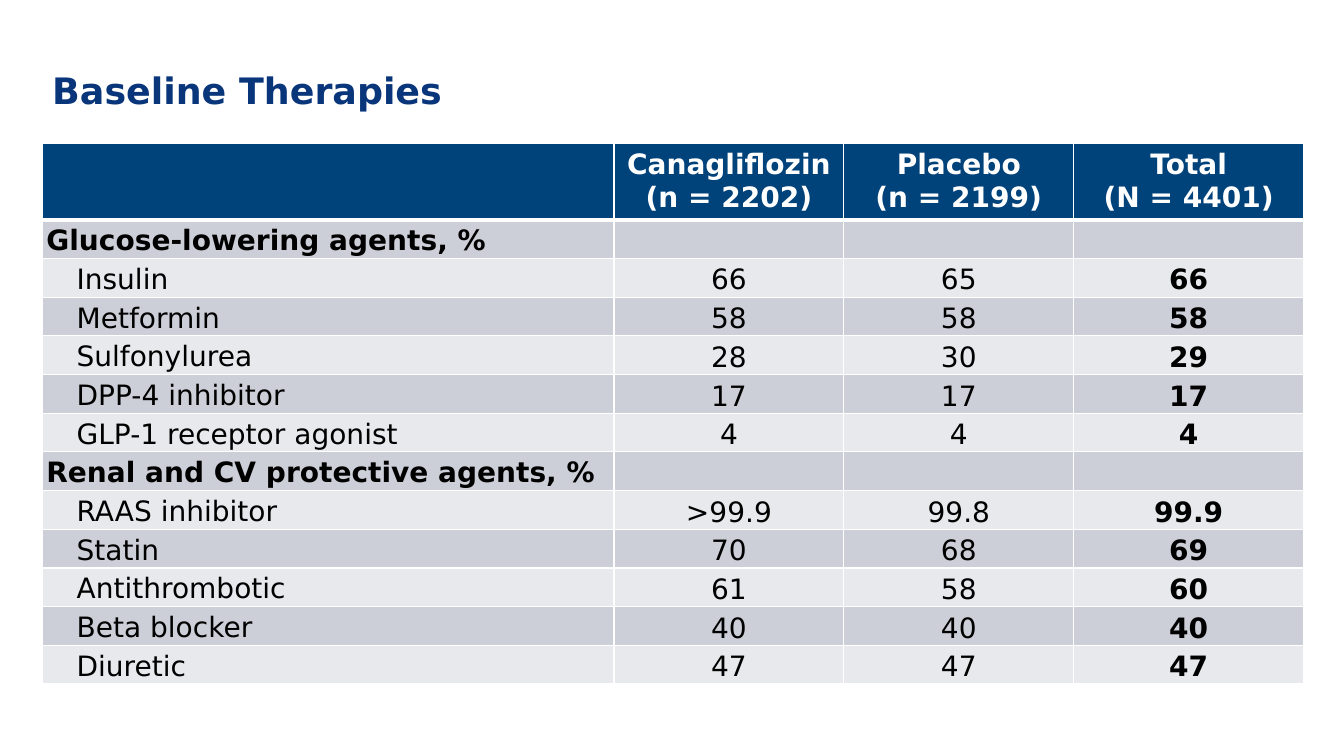
"""Build the Baseline Therapies slide."""
import pptx
import pptx.dml.color
import pptx.enum.text
import pptx.oxml
import pptx.oxml.ns
import pptx.util

Inches, Pt = pptx.util.Inches, pptx.util.Pt
ALIGN, ANCHOR = pptx.enum.text.PP_ALIGN, pptx.enum.text.MSO_ANCHOR

TITLE = "Baseline Therapies"
HEADER = ("", "Canagliflozin\n(n = 2202)", "Placebo\n(n = 2199)", "Total\n(N = 4401)")
GROUPS = {
    "Glucose-lowering agents, %": [
        ("Insulin", "66", "65", "66"),
        ("Metformin", "58", "58", "58"),
        ("Sulfonylurea", "28", "30", "29"),
        ("DPP-4 inhibitor", "17", "17", "17"),
        ("GLP-1 receptor agonist", "4", "4", "4"),
    ],
    "Renal and CV protective agents, %": [
        ("RAAS inhibitor", ">99.9", "99.8", "99.9"),
        ("Statin", "70", "68", "69"),
        ("Antithrombotic", "61", "58", "60"),
        ("Beta blocker", "40", "40", "40"),
        ("Diuretic", "47", "47", "47"),
    ],
}
FONT = "DejaVu Sans"
NAVY, TITLE_BLUE, WHITE, BLACK = "00427A", "09357A", "FFFFFF", "000000"
BANDS = ("E7E9EC", "CCCFD7")
LEFT, WIDTH = 0.42, 12.5
COL_WIDTHS = (5.67, 2.28, 2.28, 2.28)
HEADER_HEIGHT, ROW_HEIGHT = 0.76, 0.37


def rgb(color):
    return pptx.dml.color.RGBColor.from_string(color)


def style(p, size, color, bold):
    for r in p.runs:
        r.font.name, r.font.size, r.font.bold = FONT, Pt(size), bold
        r.font.color.rgb = rgb(color)


def add_borders(cell, top, bottom):
    tcPr = cell._tc.get_or_add_tcPr()
    for side, width in (("L", 1), ("R", 1), ("T", top), ("B", bottom)):
        tcPr.append(pptx.oxml.parse_xml(
            f'<a:ln{side} {pptx.oxml.ns.nsdecls("a")} w="{Pt(width)}">'
            f'<a:solidFill><a:srgbClr val="{WHITE}"/></a:solidFill></a:ln{side}>'))


def fill_cell(cell, text, row, col, is_group):
    is_header = row == 0
    add_borders(cell, 3 if row == 1 else 1, 3 if is_header else 1)
    cell.fill.solid()
    cell.fill.fore_color.rgb = rgb(NAVY if is_header else BANDS[row % 2])
    cell.margin_left = cell.margin_right = Inches(0 if col else 0.04)
    cell.margin_top = cell.margin_bottom = 0
    cell.vertical_anchor = ANCHOR.MIDDLE if col else ANCHOR.TOP
    cell.text_frame.text = text
    for p in cell.text_frame.paragraphs:
        p.alignment = ALIGN.CENTER if col else ALIGN.LEFT
        if not is_header:
            p.line_spacing = 1.15
            if col == 0 and not is_group:
                p._p.get_or_add_pPr().set("marL", str(Inches(0.3)))
        style(p, 20, WHITE if is_header else BLACK, is_header or is_group or col == 3)


def add_title(s):
    tf = s.shapes.add_textbox(Inches(LEFT), Inches(0.62), Inches(WIDTH), Inches(0.54)).text_frame
    tf.word_wrap = True
    tf.vertical_anchor = ANCHOR.BOTTOM
    tf.text = TITLE
    style(tf.paragraphs[0], 26, TITLE_BLUE, True)


def add_therapy_table(s):
    rows = [HEADER]
    for group, therapies in GROUPS.items():
        rows += [(group, "", "", ""), *therapies]
    heights = [HEADER_HEIGHT] + [ROW_HEIGHT] * (len(rows) - 1)
    table = s.shapes.add_table(len(rows), len(HEADER), Inches(LEFT), Inches(1.42),
                               Inches(WIDTH), Inches(sum(heights))).table
    for column, width in zip(table.columns, COL_WIDTHS):
        column.width = Inches(width)
    for i, values in enumerate(rows):
        table.rows[i].height = Inches(heights[i])
        for j, text in enumerate(values):
            fill_cell(table.cell(i, j), text, i, j, values[0] in GROUPS)


def main():
    prs = pptx.Presentation()
    prs.slide_width, prs.slide_height = Inches(13.33), Inches(7.5)
    s = prs.slides.add_slide(prs.slide_layouts[6])
    add_title(s)
    add_therapy_table(s)
    prs.save("out.pptx")


if __name__ == "__main__":
    main()
